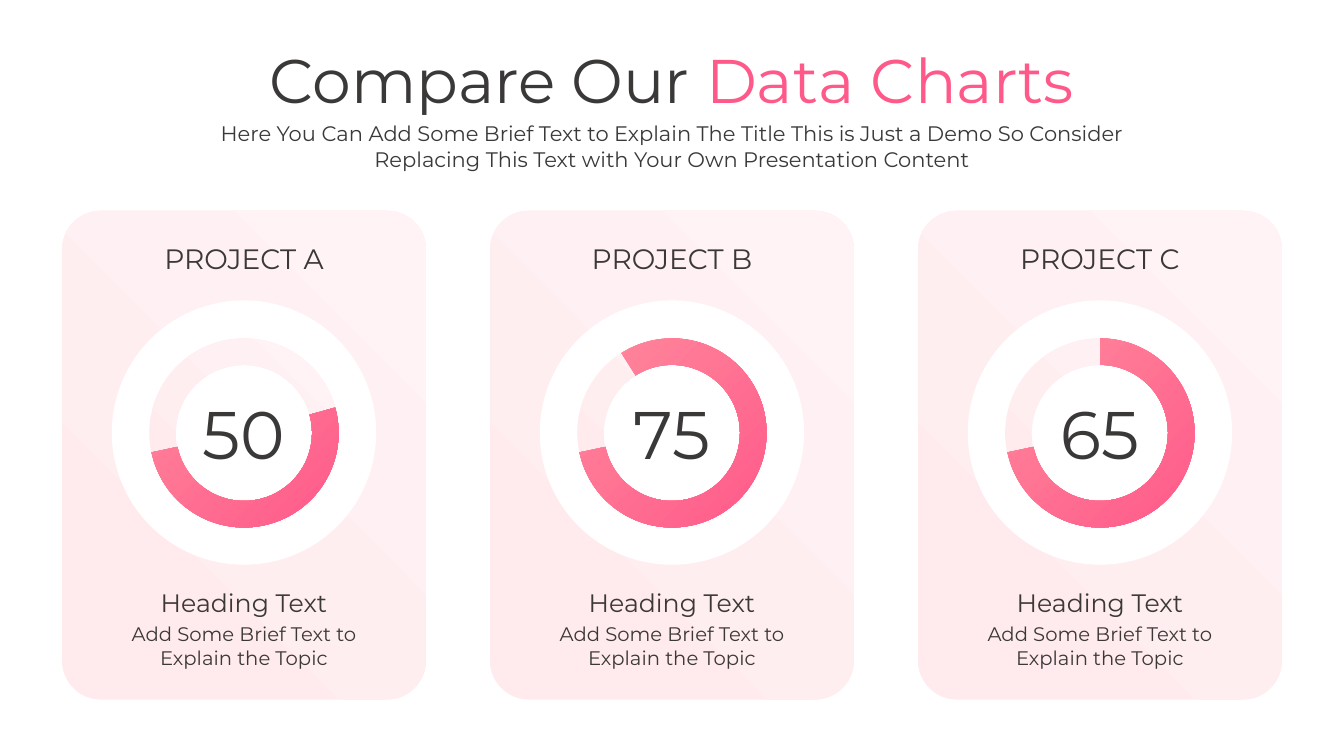
import dataclasses
import typing

import lxml.etree
import pptx
import pptx.dml.color
import pptx.dml.fill
import pptx.enum.shapes
import pptx.enum.text
import pptx.oxml.ns
import pptx.util

Pt = pptx.util.Pt
SHAPE = pptx.enum.shapes.MSO_SHAPE
FONT = "Montserrat"
COLORS = {
    "ink": "3B3838",
    "white": "FFFFFF",
    "blush": "FFEBEE",
    "pale": "FFF3F5",
    "rose": "FF598A",
    "coral": "FF8A9C",
}
SLIDE_W, SLIDE_H = 960, 540
CARD_PITCH = 305.7
ARC_END = 100.88
RING_THICKNESS = 0.14


@dataclasses.dataclass
class Project:
    name: str
    value: str
    arc_start: float


@dataclasses.dataclass
class Label:
    text: str
    top: float
    width: float
    height: float
    size: float


PROJECTS = [
    Project("PROJECT A", "50", 206.69),
    Project("PROJECT B", "75", 142.6),
    Project("PROJECT C", "65", 162.04),
]


def rgb(name: str) -> pptx.dml.color.RGBColor:
    return pptx.dml.color.RGBColor.from_string(COLORS[name])


def fill_gradient(fill: pptx.dml.fill.FillFormat, start: str, end: str,
                  first: float, angle: float) -> None:
    fill.gradient()
    fill.gradient_angle = angle
    for stop, color, position in zip(fill.gradient_stops, (start, end), (first, 1)):
        stop.color.rgb = rgb(color)
        stop.position = position


def radiate_from_corner(s: typing.Any) -> None:
    qn = pptx.oxml.ns.qn
    grad = s.element.spPr.find(qn("a:gradFill"))
    grad.remove(grad.find(qn("a:lin")))
    radial = lxml.etree.SubElement(grad, qn("a:path"), {"path": "circle"})
    lxml.etree.SubElement(radial, qn("a:fillToRect"), {"l": "100000", "t": "100000"})


def format_text(tf: typing.Any, size: float) -> None:
    tf.word_wrap = True
    tf.auto_size = pptx.enum.text.MSO_AUTO_SIZE.NONE
    tf.vertical_anchor = pptx.enum.text.MSO_ANCHOR.TOP
    for p in tf.paragraphs:
        p.alignment = pptx.enum.text.PP_ALIGN.CENTER
        p.space_before = Pt(0)
        for r in p.runs:
            r.font.name = FONT
            r.font.size = Pt(size)
            r.font.color.rgb = rgb("ink")


def place(s: typing.Any, left: float, top: float, width: float, height: float) -> None:
    s.left, s.top, s.width, s.height = Pt(left), Pt(top), Pt(width), Pt(height)


def add_centered(shapes: typing.Any, kind: typing.Any, center: float, top: float,
                 width: float, height: float, adjustments: typing.Sequence[float] = ()) -> typing.Any:
    s = shapes.add_shape(kind, Pt(center - width / 2), Pt(top), Pt(width), Pt(height))
    s.shadow.inherit = False
    s.line.fill.background()
    for i, value in enumerate(adjustments):
        s.adjustments[i] = value
    return s


def add_label(shapes: typing.Any, center: float, label: Label) -> None:
    s = shapes.add_textbox(Pt(center - label.width / 2), Pt(label.top),
                           Pt(label.width), Pt(label.height))
    s.text_frame.text = label.text
    format_text(s.text_frame, label.size)


def add_card(shapes: typing.Any, center: float, project: Project) -> None:
    card = add_centered(shapes, SHAPE.ROUNDED_RECTANGLE, center, 150.5, 260, 349.2, [0.107])
    fill_gradient(card.fill, "blush", "pale", 0.1, 45)

    disc = add_centered(shapes, SHAPE.OVAL, center, 214.6, 188.8, 188.8)
    disc.fill.solid()
    disc.fill.fore_color.rgb = rgb("white")

    gauge = shapes.add_group_shape().shapes
    ring = add_centered(gauge, SHAPE.DONUT, center, 241.7, 135.4, 135.4, [RING_THICKNESS])
    fill_gradient(ring.fill, "blush", "pale", 0.1, 45)
    arc = add_centered(gauge, SHAPE.BLOCK_ARC, center, 241.7, 135, 135,
                       [project.arc_start, ARC_END, RING_THICKNESS])
    fill_gradient(arc.fill, "rose", "coral", 0, 0)
    radiate_from_corner(arc)

    for label in (
        Label(project.name, 169.2, 144.7, 31.5, 20),
        Label(project.value, 276.5, 78.5, 65.4, 48),
        Label("Heading Text", 416.2, 167.8, 29, 18),
        Label("Add Some Brief Text to Explain the Topic", 440.8, 195, 41.2, 14),
    ):
        add_label(shapes, center, label)


def main() -> None:
    prs = pptx.Presentation()
    prs.slide_width, prs.slide_height = Pt(SLIDE_W), Pt(SLIDE_H)
    slide = prs.slides.add_slide(prs.slide_layouts[0])

    title, subtitle = slide.placeholders
    place(title, 115.7, 26.6, 728.6, 60.6)
    title.text_frame.text = "Compare Our "
    r = title.text_frame.paragraphs[0].add_run()
    r.text = "Data Charts"
    format_text(title.text_frame, 44)
    fill_gradient(r.font.fill, "rose", "coral", 0, 180)

    place(subtitle, 115.7, 82.8, 728.6, 44)
    subtitle.text_frame.text = (
        "Here You Can Add Some Brief Text to Explain The Title This is Just a Demo "
        "So Consider Replacing This Text with Your Own Presentation Content"
    )
    format_text(subtitle.text_frame, 15)

    for i, project in enumerate(PROJECTS):
        add_card(slide.shapes, SLIDE_W / 2 + (i - 1) * CARD_PITCH, project)

    prs.save("out.pptx")


if __name__ == "__main__":
    main()
